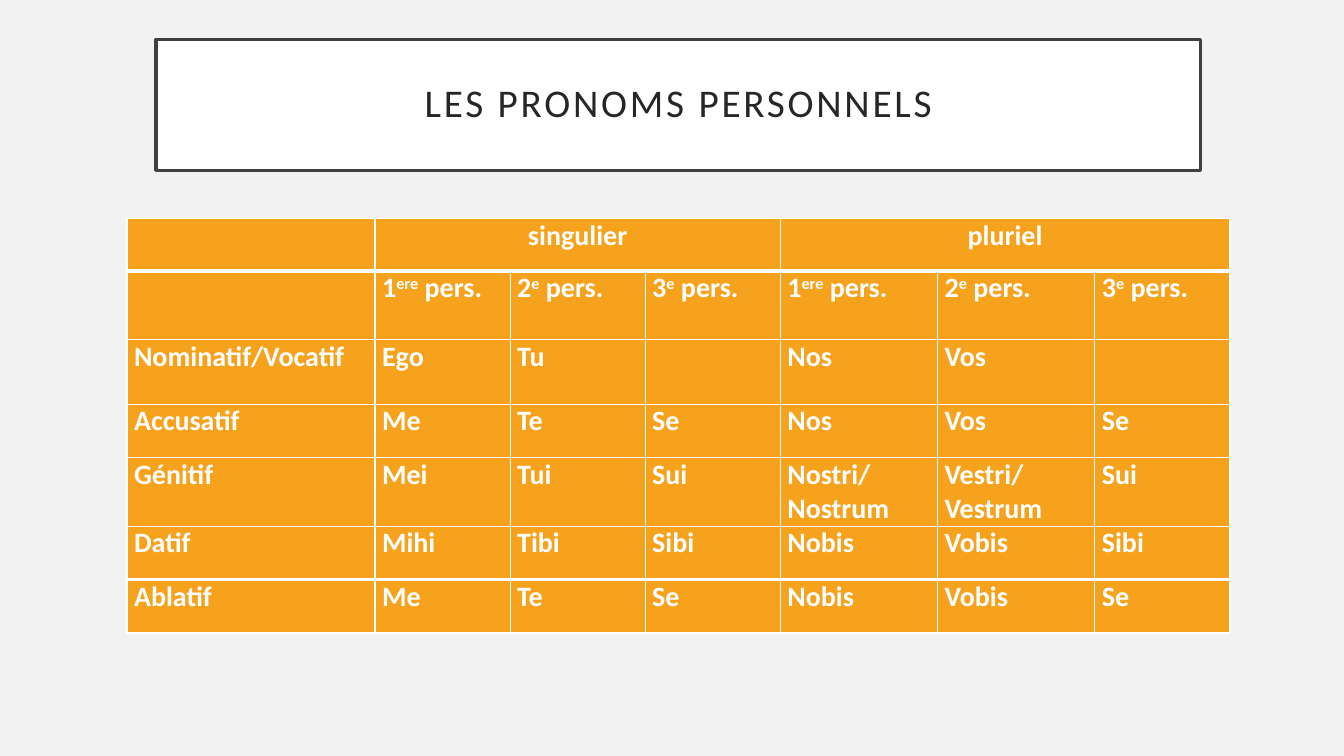
from pptx import Presentation
from pptx import util as u
from pptx.dml.color import RGBColor
from pptx.enum import shapes, text
from pptx.oxml import parse_xml
from pptx.oxml.ns import nsdecls

COLORS = {
    "background": "F2F2F2",
    "white": "FFFFFF",
    "frame": "404040",
    "title": "262626",
    "orange": "F6A21D",
}
PERSONS = ["1^ere^ pers.", "2^e^ pers.", "3^e^ pers."]
PRONOUNS = [
    ["", "singulier", "", "", "pluriel", "", ""],
    ["", *PERSONS, *PERSONS],
    ["Nominatif/Vocatif", "Ego", "Tu", "", "Nos", "Vos", ""],
    ["Accusatif", "Me", "Te", "Se", "Nos", "Vos", "Se"],
    ["Génitif", "Mei", "Tui", "Sui", "Nostri/\nNostrum", "Vestri/\nVestrum", "Sui"],
    ["Datif", "Mihi", "Tibi", "Sibi", "Nobis", "Vobis", "Sibi"],
    ["Ablatif", "Me", "Te", "Se", "Nobis", "Vobis", "Se"],
]
COLUMN_WIDTHS = [2.46, 1.34, 1.34, 1.34, 1.56, 1.56, 1.34]
ROW_HEIGHTS = [0.52, 0.68, 0.64, 0.53, 0.64, 0.53, 0.53]


def color(name):
    return RGBColor.from_string(COLORS[name])


def write_text(frame, content, font="Calibri", size=20, ink="white", bold=False,
               align=text.PP_ALIGN.LEFT, line_spacing=None, tracking=0):
    for index, line in enumerate(content.split("\n")):
        paragraph = frame.add_paragraph() if index else frame.paragraphs[0]
        paragraph.alignment = align
        paragraph.line_spacing = line_spacing
        for part, piece in enumerate(line.split("^")):
            run = paragraph.add_run()
            run.text = piece
            run.font.name = font
            run.font.size = u.Pt(size)
            run.font.bold = bold
            run.font.color.rgb = color(ink)
            properties = run._r.get_or_add_rPr()
            if tracking:
                properties.set("spc", str(tracking * 100))
            if part % 2:
                properties.set("baseline", "30000")


class SlideBuilder:
    def __init__(self, presentation):
        self.slide = presentation.slides.add_slide(presentation.slide_layouts[6])
        self.slide.background.fill.solid()
        self.slide.background.fill.fore_color.rgb = color("background")

    def title(self, content, left, top, width, height):
        shape = self.slide.shapes.add_shape(
            shapes.MSO_SHAPE.RECTANGLE, *map(u.Inches, (left, top, width, height)))
        shape.shadow.inherit = False
        shape.fill.solid()
        shape.fill.fore_color.rgb = color("white")
        shape.line.color.rgb = color("frame")
        shape.line.width = u.Pt(2.5)
        frame = shape.text_frame
        frame.word_wrap = True
        frame.vertical_anchor = text.MSO_ANCHOR.MIDDLE
        frame.margin_left = frame.margin_right = u.Inches(0.2)
        frame.margin_top = frame.margin_bottom = u.Inches(0.2)
        write_text(frame, content, size=28, ink="title", tracking=2,
                   align=text.PP_ALIGN.CENTER, line_spacing=0.9)

    def borders(self, cell, **widths):
        properties = cell._tc.get_or_add_tcPr()
        for side in "LRTB":
            width = u.Pt(widths.get(side, 1))
            properties.append(parse_xml(
                f'<a:ln{side} {nsdecls("a")} w="{width}"><a:solidFill>'
                f'<a:srgbClr val="{COLORS["white"]}"/></a:solidFill></a:ln{side}>'))

    def table(self, rows, left, top, column_widths, row_heights):
        graphic = self.slide.shapes.add_table(
            len(rows), len(column_widths), u.Inches(left), u.Inches(top),
            u.Inches(sum(column_widths)), u.Inches(sum(row_heights)))
        table = graphic.table
        for column, width in zip(table.columns, column_widths):
            column.width = u.Inches(width)
        for row, height in zip(table.rows, row_heights):
            row.height = u.Inches(height)
        for first in (1, 4):
            table.cell(0, first).merge(table.cell(0, first + 2))
        last = len(rows) - 1
        for row, entries in enumerate(rows):
            for column, entry in enumerate(entries):
                cell = table.cell(row, column)
                self.borders(cell, T=3 if row in (1, last) else 1,
                             B=3 if row in (0, last - 1) else 1)
                cell.fill.solid()
                cell.fill.fore_color.rgb = color("orange")
                cell.margin_left = cell.margin_right = u.Inches(0.07)
                cell.margin_top = cell.margin_bottom = 0
                if entry:
                    write_text(cell.text_frame, entry, bold=True,
                               align=text.PP_ALIGN.LEFT if row else text.PP_ALIGN.CENTER)


def main():
    presentation = Presentation()
    presentation.slide_width = u.Inches(13.33)
    presentation.slide_height = u.Inches(7.5)
    builder = SlideBuilder(presentation)
    builder.title("LES PRONOMS PERSONNELS", 1.55, 0.39, 10.36, 1.3)
    builder.table(PRONOUNS, 1.26, 2.17, COLUMN_WIDTHS, ROW_HEIGHTS)
    presentation.save("out.pptx")


if __name__ == "__main__":
    main()
